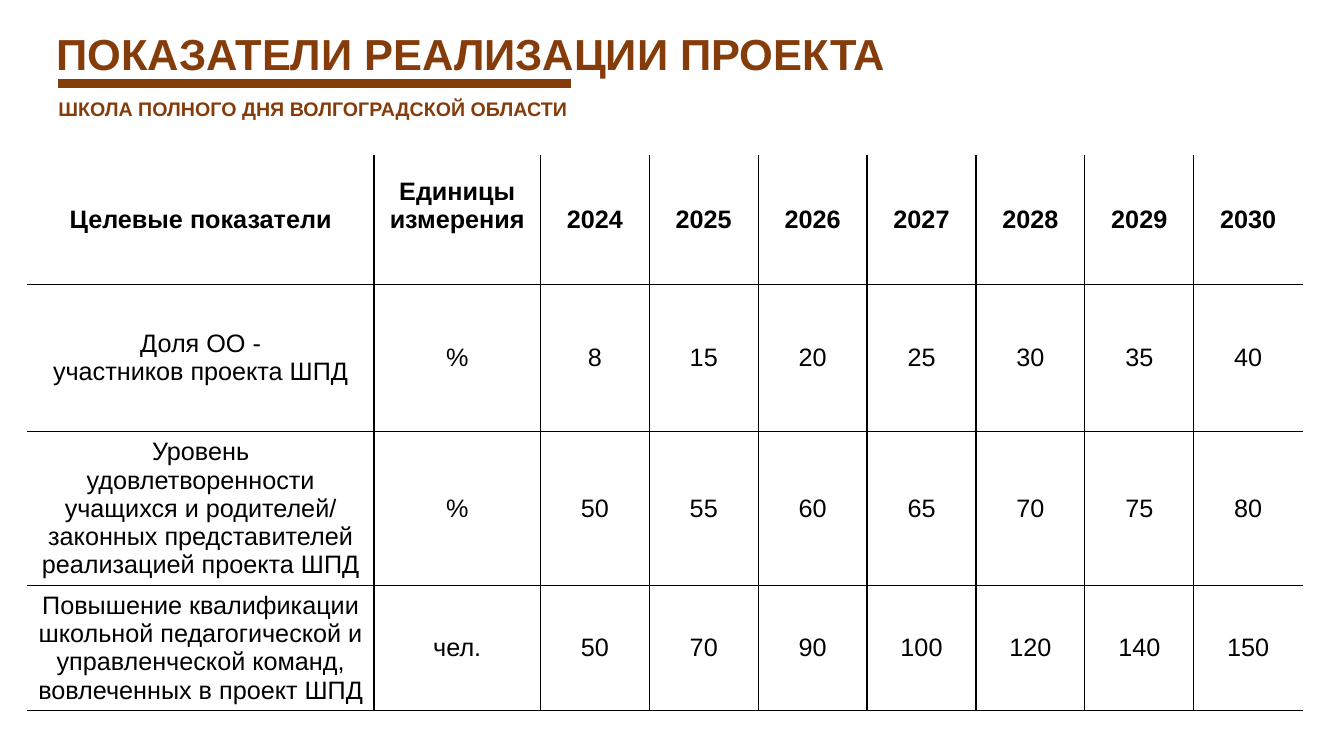
from dataclasses import dataclass

from lxml import etree
from pptx import Presentation
from pptx.dml.color import RGBColor
from pptx.enum.shapes import MSO_CONNECTOR
from pptx.enum.text import MSO_ANCHOR, PP_ALIGN
from pptx.oxml.ns import qn
from pptx.util import Pt

PX = 9144  # 100 px to the inch
CENTER, LEFT = PP_ALIGN.CENTER, PP_ALIGN.LEFT
MIDDLE, TOP = MSO_ANCHOR.MIDDLE, MSO_ANCHOR.TOP
STRAIGHT = MSO_CONNECTOR.STRAIGHT


@dataclass(frozen=True)
class Theme:
    font: str = "Arial"
    brown: str = "843C0B"
    black: str = "000000"
    title: int = 31
    sub: int = 14
    body: int = 18
    rule: int = 6
    grid: int = 1


THEME = Theme()

COLS = [344, 165] + [108] * 7
ROWS = [128, 146, 153, 124]
DATA = [
    ["Целевые показатели", "Единицы измерения", *range(2024, 2031)],
    ["Доля ОО -\nучастников проекта ШПД", "%", 8, 15, 20, 25, 30, 35, 40],
    ["Уровень удовлетворенности учащихся и родителей/ законных "
     "представителей реализацией проекта ШПД",
     "%", 50, 55, 60, 65, 70, 75, 80],
    ["Повышение квалификации школьной педагогической и "
     "управленческой команд, вовлеченных в проект ШПД",
     "чел.", 50, 70, 90, 100, 120, 140, 150],
]


def px(*nums):
    return [num * PX for num in nums]


def write(frame, text, size=THEME.body, color=THEME.black, bold=False,
          align=CENTER, space=None):
    for i, line in enumerate(text.split("\n")):
        para = frame.add_paragraph() if i else frame.paragraphs[0]
        para.alignment = align
        if space:
            para.line_spacing = space
        run = para.add_run()
        run.text = line
        font = run.font
        font.name, font.size, font.bold = THEME.font, Pt(size), bold
        font.color.rgb = RGBColor.from_string(color)


def add_text(slide, box, text, anchor=TOP, wrap=True, **style):
    frame = slide.shapes.add_textbox(*px(*box)).text_frame
    frame.word_wrap = wrap
    frame.vertical_anchor = anchor
    write(frame, text, **style)


def add_edge(cell, side, shown):
    line = etree.SubElement(cell._tc.get_or_add_tcPr(), qn(f"a:ln{side}"),
                            w=str(Pt(THEME.grid)))
    if shown:
        fill = etree.SubElement(line, qn("a:solidFill"))
        etree.SubElement(fill, qn("a:srgbClr"), val=THEME.black)
    else:
        etree.SubElement(line, qn("a:noFill"))


def add_head(slide, box):
    x, y, w, h = box
    # Title
    add_text(slide, (x, y, w, 85), "ПОКАЗАТЕЛИ РЕАЛИЗАЦИИ ПРОЕКТА",
             anchor=MIDDLE, size=THEME.title, color=THEME.brown, bold=True,
             space=0.7)
    # Rule under the title
    rule = slide.shapes.add_connector(
        STRAIGHT, *px(x + 16, y + 66, x + 524, y + 66))
    rule.line.color.rgb = RGBColor.from_string(THEME.brown)
    rule.line.width = Pt(THEME.rule)
    etree.SubElement(rule._element.spPr, qn("a:effectLst"))
    # Subtitle
    add_text(slide, (x + 6, y + h - 34, 529, 34),
             "ШКОЛА ПОЛНОГО ДНЯ ВОЛГОГРАДСКОЙ ОБЛАСТИ", wrap=False,
             size=THEME.sub, color=THEME.brown, bold=True, align=LEFT)


def add_grid(slide, box):
    table = slide.shapes.add_table(len(ROWS), len(COLS), *px(*box)).table
    table.first_row = table.horz_banding = False
    for col, wide in zip(table.columns, COLS):
        col.width = wide * PX
    for row, high in zip(table.rows, ROWS):
        row.height = high * PX
    # Cells: inner lines and the bottom line only
    for r, items in enumerate(DATA):
        for c, item in enumerate(items):
            cell = table.cell(r, c)
            cell.vertical_anchor = MIDDLE
            cell.margin_left = cell.margin_right = 9 * PX
            cell.margin_top = cell.margin_bottom = 4 * PX
            add_edge(cell, "L", c > 0)
            add_edge(cell, "R", c < len(COLS) - 1)
            add_edge(cell, "T", r > 0)
            add_edge(cell, "B", True)
            cell.fill.background()
            write(cell.text_frame, str(item), bold=r == 0)
    # The unit heading sits one line higher
    table.cell(0, 1).margin_bottom = 32 * PX


def main():
    deck = Presentation()
    deck.slide_width, deck.slide_height = px(1333, 750)
    slide = deck.slides.add_slide(deck.slide_layouts[6])
    add_grid(slide, (27, 154, sum(COLS), sum(ROWS)))
    add_head(slide, (42, 17, 850, 108))
    deck.save("out.pptx")


if __name__ == "__main__":
    main()
